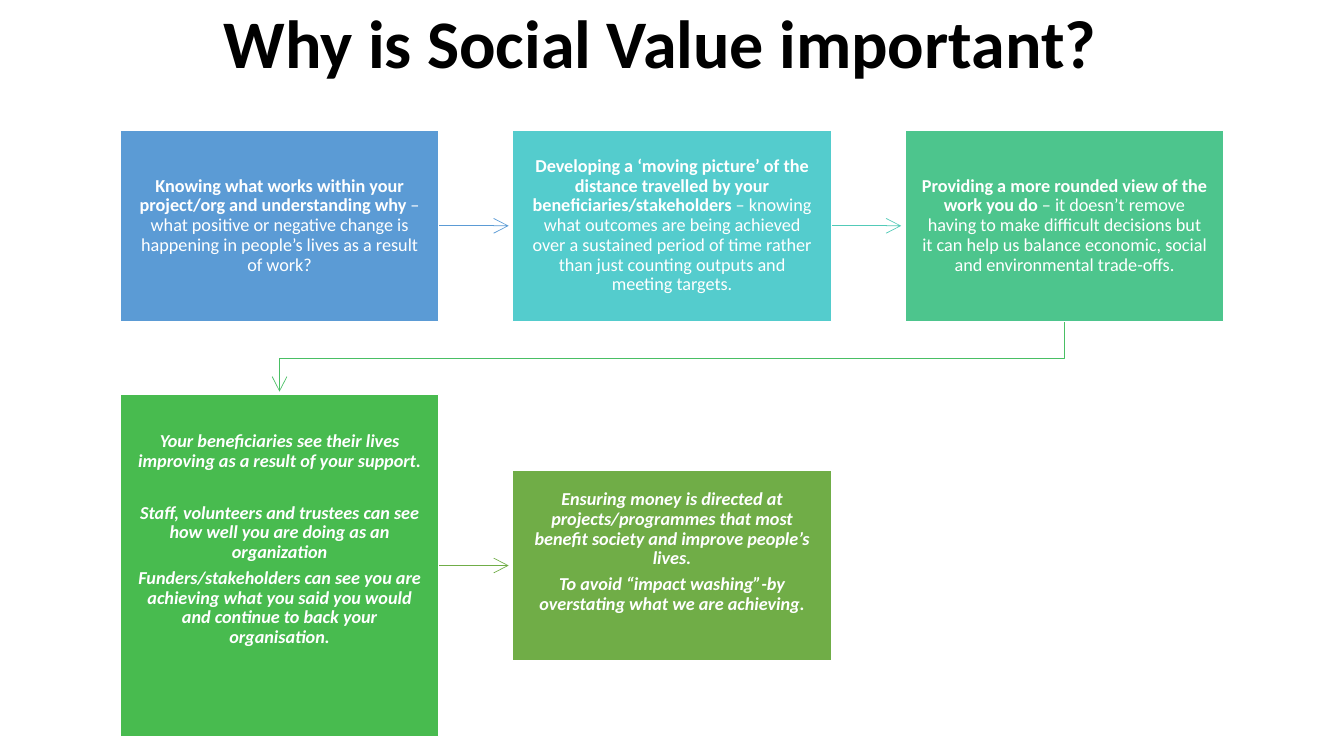
import pptx
import pptx.util
import pptx.dml.color
import pptx.enum.shapes
import pptx.enum.text
import pptx.oxml
import pptx.oxml.ns
from pptx.util import Cm

TITLE = "Why is Social Value important?"
COLOURS = {
    "black": "000000", "white": "FFFFFF", "blue": "5B9BD5", "cyan": "54CCCD",
    "teal": "52CAB8", "mint": "4DC58D", "green": "48BB4F", "leaf": "49BF64",
    "olive": "70AD47",
}
BOLD, PLAIN = {"bold": True}, {"bold": False}
STRONG = {"bold": True, "italic": True}
LINE_GAP, BLOCK_GAP = 4.5, 23.1

BOXES = [
    {"column": 0, "middle": 5.69, "height": 4.82, "fill": "blue", "foot": 0.41, "paragraphs": [
        (LINE_GAP, [("Knowing what works within your project/org and understanding why ", BOLD),
                    ("– what positive or negative change is happening in people’s lives as a result of work?", PLAIN)])]},
    {"column": 1, "middle": 5.69, "height": 4.82, "fill": "cyan", "foot": 0.41, "paragraphs": [
        (LINE_GAP, [("Developing a ‘moving picture’ of the distance travelled by your beneficiaries/stakeholders ", BOLD),
                    ("– knowing what outcomes are being achieved over a sustained period of time rather than just counting outputs and meeting targets.", PLAIN)])]},
    {"column": 2, "middle": 5.69, "height": 4.82, "fill": "mint", "foot": 0.41, "paragraphs": [
        (LINE_GAP, [("Providing a more rounded view of the work you do ", BOLD),
                    ("– it doesn’t remove having to make difficult decisions but it can help us balance economic, social and environmental trade-offs.", PLAIN)])]},
    {"column": 0, "middle": 14.25, "height": 8.62, "fill": "green", "foot": 1.72, "paragraphs": [
        (BLOCK_GAP, [("Your beneficiaries see their lives improving as a result of your support.", STRONG)]),
        (LINE_GAP, [("Staff, volunteers and trustees can see how well you are doing as an organization", STRONG)]),
        (LINE_GAP, [("Funders/stakeholders can see you are achieving what you said you would and continue to back your organisation.", STRONG)])]},
    {"column": 1, "middle": 14.25, "height": 4.82, "fill": "olive", "foot": 1.07, "paragraphs": [
        (LINE_GAP, [("Ensuring money is directed at projects/programmes that most benefit society and improve people’s lives.", STRONG)]),
        (LINE_GAP, [("To avoid “impact washing”-by overstating what we are achieving.", STRONG)])]},
]
ARROWS = [(0, 5.69, "blue"), (1, 5.69, "teal"), (0, 14.25, "olive")]

LEFT, PITCH, BOX_WIDTH, ARROW_LENGTH = 3.03, 9.89, 8.03, 1.76
INSET = 0.41


def colour(name):
    return pptx.dml.color.RGBColor.from_string(COLOURS[name])


def column_left(column):
    return LEFT + column * PITCH


def write(para, text, size=13, ink="white", bold=False, italic=False):
    span = para.add_run()
    span.text = text
    font = span.font
    font.name = "Calibri"
    font.size = pptx.util.Pt(size)
    font.bold = bold
    font.italic = italic
    font.color.rgb = colour(ink)


def style_arrow(arrow, ink):
    arrow.line.color.rgb = colour(ink)
    arrow.line.width = pptx.util.Pt(0.5)
    tail = pptx.oxml.parse_xml(
        '<a:tailEnd %s type="arrow" w="lg" len="lg"/>' % pptx.oxml.ns.nsdecls("a"))
    arrow.line._get_or_add_ln().append(tail)


def add_arrow(page, column, middle, ink):
    start = column_left(column) + BOX_WIDTH
    arrow = page.shapes.add_connector(
        pptx.enum.shapes.MSO_CONNECTOR.STRAIGHT,
        Cm(start), Cm(middle), Cm(start + ARROW_LENGTH), Cm(middle))
    style_arrow(arrow, ink)
    arrow._element.spPr.append(
        pptx.oxml.parse_xml("<a:effectLst %s/>" % pptx.oxml.ns.nsdecls("a")))


def add_return_arrow(page):
    right, left = (column_left(column) + BOX_WIDTH / 2 for column in (2, 0))
    points = [(right, 8.1), (right, 9.04), (left, 9.04), (left, 9.87)]
    corners = [(Cm(x), Cm(y)) for x, y in points]
    builder = page.shapes.build_freeform(*corners[0])
    builder.add_line_segments(corners[1:], close=False)
    arrow = builder.convert_to_shape()
    arrow.shadow.inherit = False
    arrow.fill.background()
    style_arrow(arrow, "leaf")


def add_box(page, column, middle, height, fill, foot, paragraphs):
    box = page.shapes.add_shape(
        pptx.enum.shapes.MSO_SHAPE.RECTANGLE, Cm(column_left(column)),
        Cm(middle - height / 2), Cm(BOX_WIDTH), Cm(height))
    box.shadow.inherit = False
    box.fill.solid()
    box.fill.fore_color.rgb = colour(fill)
    box.line.color.rgb = colour("white")
    box.line.width = pptx.util.Pt(1)
    frame = box.text_frame
    frame.word_wrap = True
    frame.vertical_anchor = pptx.enum.text.MSO_ANCHOR.MIDDLE
    frame.margin_left = frame.margin_right = frame.margin_top = Cm(INSET)
    frame.margin_bottom = Cm(foot)
    for index, (gap, spans) in enumerate(paragraphs):
        para = frame.add_paragraph() if index else frame.paragraphs[0]
        para.alignment = pptx.enum.text.PP_ALIGN.CENTER
        para.line_spacing = 0.9
        para.space_after = pptx.util.Pt(gap)
        for text, look in spans:
            write(para, text, **look)


def add_title(page):
    title = page.shapes.title
    title.left, title.top, title.width, title.height = Cm(5.38), Cm(0.51), Cm(28.45), Cm(1.3)
    frame = title.text_frame
    frame.word_wrap = True
    frame.auto_size = pptx.enum.text.MSO_AUTO_SIZE.NONE
    frame.vertical_anchor = pptx.enum.text.MSO_ANCHOR.MIDDLE
    para = frame.paragraphs[0]
    para.alignment = pptx.enum.text.PP_ALIGN.LEFT
    para.line_spacing = 0.9
    write(para, TITLE, size=48.6, ink="black", bold=True)


def main():
    deck = pptx.Presentation()
    deck.slide_width, deck.slide_height = Cm(33.87), Cm(19.05)
    page = deck.slides.add_slide(deck.slide_layouts[5])
    add_title(page)
    for arrow in ARROWS:
        add_arrow(page, *arrow)
    add_return_arrow(page)
    for box in BOXES:
        add_box(page, **box)
    deck.save("out.pptx")


if __name__ == "__main__":
    main()
